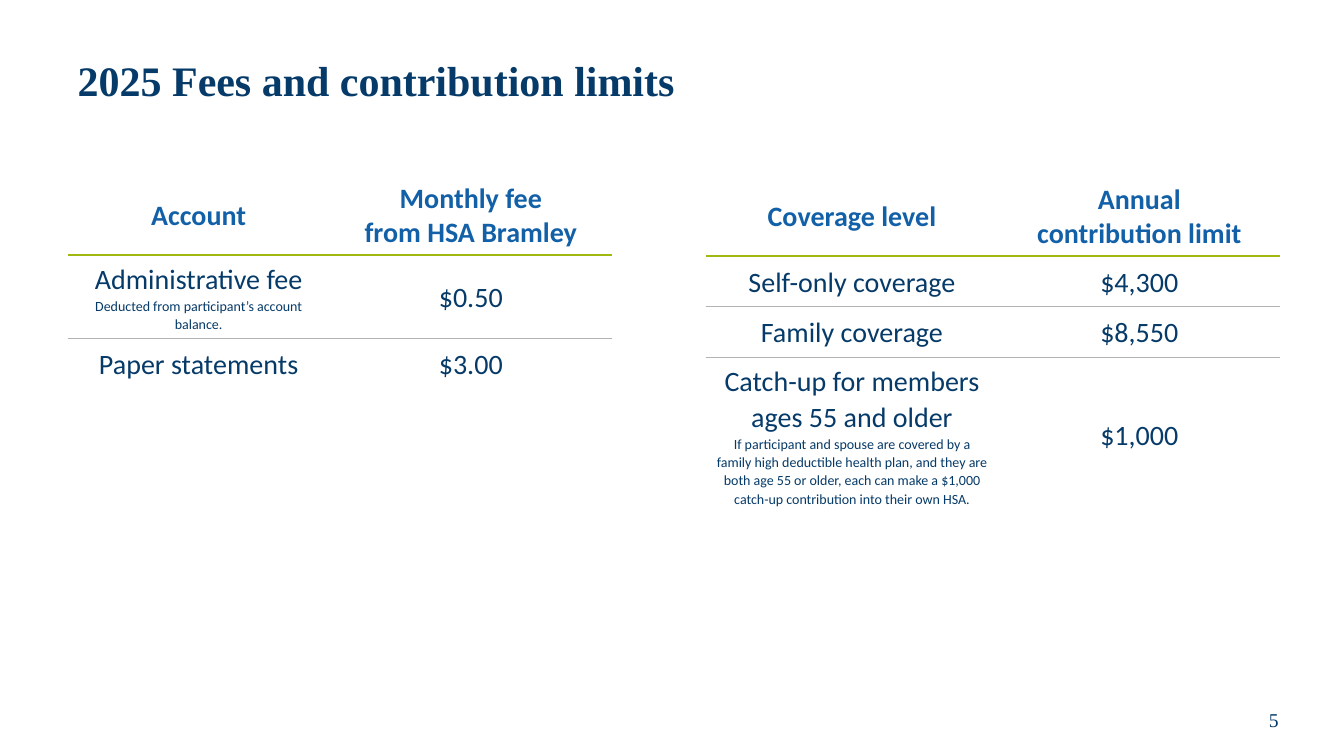
import pptx
import pptx.dml.color
import pptx.enum.text
import pptx.oxml
import pptx.oxml.ns
import pptx.util

COLORS = {"navy": "063A68", "blue": "1260A7", "green": "A0B810", "gray": "B2B2B2"}
SERIF, SANS = "Times New Roman", "Calibri"
CENTER = pptx.enum.text.PP_ALIGN.CENTER
MIDDLE = pptx.enum.text.MSO_ANCHOR.MIDDLE
PLAIN_TABLE_STYLE = "{2D5ABB26-0587-4C30-8999-92F81FD0307C}"

HEADER = {"name": SANS, "size": 20, "color": "blue", "bold": True}
BODY = {"name": SANS, "size": 20, "color": "navy", "bold": False}
NOTE = {**BODY, "size": 10}
TITLE = {"name": SERIF, "size": 30, "color": "navy", "bold": True}
PAGE_NUMBER = {"name": SERIF, "size": 14, "color": "navy", "bold": False}

HEADER_RULE = ("green", 2.25)
ROW_RULE = ("gray", 0.5)

FEES = [
    ["Account", "Monthly fee\nfrom HSA Bramley"],
    [("Administrative fee", "Deducted from participant’s account balance."), "$0.50"],
    ["Paper statements", "$3.00"],
]
LIMITS = [
    ["Coverage level", "Annual\ncontribution limit"],
    ["Self-only coverage", "$4,300"],
    ["Family coverage", "$8,550"],
    [("Catch-up for members ages 55 and older",
      "If participant and spouse are covered by a family high deductible health plan, "
      "and they are both age 55 or older, each can make a $1,000 catch-up contribution "
      "into their own HSA."), "$1,000"],
]


class SlideBuilder:
    def __init__(self, presentation):
        self.slide = presentation.slides.add_slide(presentation.slide_layouts[5])

    def set_text(self, paragraph, text, style, **layout):
        paragraph.text = text
        for name, value in layout.items():
            setattr(paragraph, name, value)
        values = {"name": style["name"], "size": pptx.util.Pt(style["size"]),
                  "bold": style["bold"]}
        for run in paragraph.runs:
            for name, value in values.items():
                setattr(run.font, name, value)
            run.font.color.rgb = pptx.dml.color.RGBColor.from_string(COLORS[style["color"]])

    def title(self, text, left, top, width, height):
        shape = self.slide.shapes.title
        position = {"left": left, "top": top, "width": width, "height": height}
        for name, value in position.items():
            setattr(shape, name, pptx.util.Inches(value))
        shape.text_frame.vertical_anchor = MIDDLE
        self.set_text(shape.text_frame.paragraphs[0], text, TITLE,
                      alignment=pptx.enum.text.PP_ALIGN.LEFT, line_spacing=0.9)

    def page_number(self, text, *box):
        shape = self.slide.shapes.add_textbox(*map(pptx.util.Inches, box))
        shape.text_frame.word_wrap = True
        shape.text_frame.vertical_anchor = MIDDLE
        self.set_text(shape.text_frame.paragraphs[0], text, PAGE_NUMBER, alignment=CENTER)

    def border(self, cell, tag, rule):
        """Put one edge line ahead of the cell's other properties."""
        color, width = rule
        line = pptx.oxml.parse_xml(
            f'<a:{tag} {pptx.oxml.ns.nsdecls("a")} w="{pptx.util.Pt(width)}">'
            f'<a:solidFill><a:srgbClr val="{COLORS[color]}"/></a:solidFill></a:{tag}>')
        cell._tc.get_or_add_tcPr().insert(0, line)

    def fill_cell(self, cell, content, is_header):
        cell.fill.background()
        cell.vertical_anchor = MIDDLE
        texts = (content,) if isinstance(content, str) else content
        frame = cell.text_frame
        for index, text in enumerate(texts):
            paragraph = frame.add_paragraph() if index else frame.paragraphs[0]
            style = HEADER if is_header else NOTE if index else BODY
            self.set_text(paragraph, text, style, alignment=CENTER,
                          line_spacing=1.0 if is_header else 1.07)

    def table(self, rows, left, top, column_widths, row_height=0.5):
        box = (left, top, sum(column_widths), row_height * len(rows))
        table = self.slide.shapes.add_table(
            len(rows), len(column_widths), *map(pptx.util.Inches, box)).table
        table.first_row = table.horz_banding = False
        table._tbl.tblPr.find(pptx.oxml.ns.qn("a:tableStyleId")).text = PLAIN_TABLE_STYLE
        for column, width in zip(table.columns, column_widths):
            column.width = pptx.util.Inches(width)
        rules = [HEADER_RULE] + [ROW_RULE] * (len(rows) - 2)
        for row_index, row in enumerate(rows):
            for column_index, content in enumerate(row):
                cell = table.cell(row_index, column_index)
                self.fill_cell(cell, content, row_index == 0)
                if row_index < len(rules):
                    self.border(cell, "lnB", rules[row_index])
                if row_index:
                    self.border(cell, "lnT", rules[row_index - 1])


def main():
    presentation = pptx.Presentation()
    presentation.slide_width = pptx.util.Inches(13.33)
    presentation.slide_height = pptx.util.Inches(7.5)
    builder = SlideBuilder(presentation)
    builder.title("2025 Fees and contribution limits", 0.67, 0.25, 12, 1.15)
    builder.table(FEES, 0.67, 1.75, (2.6, 2.8))
    builder.table(LIMITS, 7, 1.76, (2.9, 2.8))
    builder.page_number("5", 12.05, 6.89, 1.17, 0.5)
    presentation.save("out.pptx")


if __name__ == "__main__":
    main()
